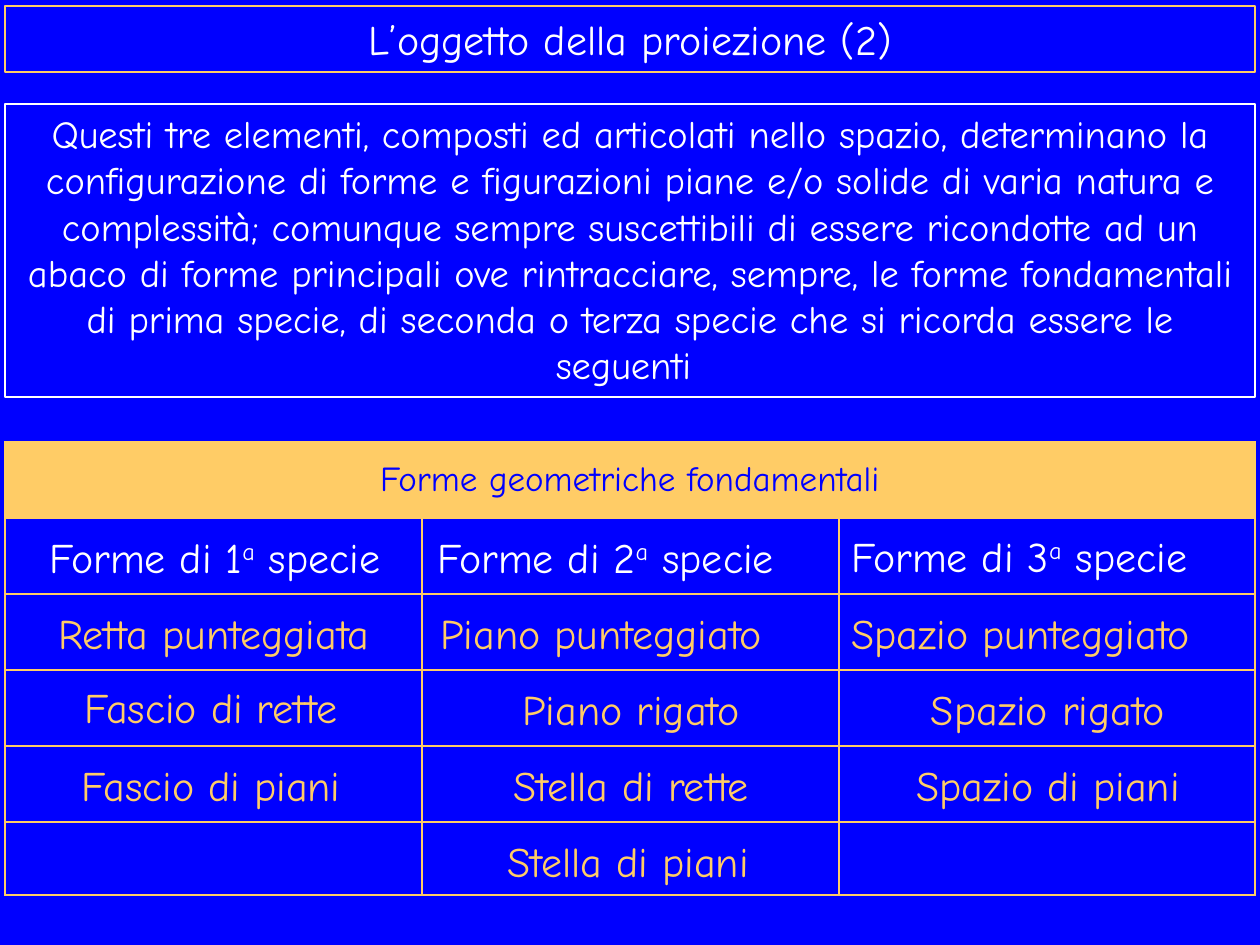
from dataclasses import dataclass

from lxml import etree
from pptx import Presentation
from pptx.dml.color import RGBColor
from pptx.enum.shapes import MSO_SHAPE
from pptx.enum.text import MSO_ANCHOR, MSO_AUTO_SIZE, PP_ALIGN
from pptx.oxml.ns import qn
from pptx.util import Emu, Pt

CENTER, LEFT = PP_ALIGN.CENTER, PP_ALIGN.LEFT
TOP, MIDDLE = MSO_ANCHOR.TOP, MSO_ANCHOR.MIDDLE
GROW, FIXED = MSO_AUTO_SIZE.SHAPE_TO_FIT_TEXT, MSO_AUTO_SIZE.NONE
RECTANGLE = MSO_SHAPE.RECTANGLE

PX_PER_INCH = 126
FONT = "Comic Neue"
BLUE, WHITE, GOLD = "0000FF", "FFFFFF", "FFCC66"

MARGIN, FULL_WIDTH = 5, 1250
TABLE_TOP, ROW_HEIGHT, LAST_ROW_HEIGHT, ROW_COUNT = 442, 76, 73, 6
COLUMN_WIDTHS = (417, 417, 416)
LABEL_LEFTS = (5, 425, 839)
LABEL_TOP, LABEL_WIDTH, LABEL_HEIGHT = 525, 412, 63

TITLE = "L’oggetto della proiezione (2)"
INTRO = (
    "Questi tre elementi, composti ed articolati nello spazio, determinano la "
    "configurazione di forme e figurazioni piane e/o solide di varia natura e "
    "complessità; comunque sempre suscettibili di essere ricondotte ad un abaco "
    "di forme principali ove rintracciare, sempre, le forme fondamentali di prima "
    "specie, di seconda o terza specie che si ricorda essere le seguenti "
)
TABLE_TITLE = "Forme geometriche fondamentali"


@dataclass(frozen=True)
class Span:
    text: str
    size: int
    color: str
    raised: bool = False


@dataclass(frozen=True)
class Label:
    column: int
    row: int
    spans: tuple[Span, ...]
    align: PP_ALIGN = CENTER
    shift_x: int = 0
    shift_y: int = 0


def heading(number: int) -> tuple[Span, ...]:
    return (
        Span(f"Forme di {number}", 24, WHITE),
        Span("a", 24, WHITE, raised=True),
        Span(" specie", 24, WHITE),
    )


def form(text: str) -> tuple[Span, ...]:
    return (Span(text, 24, GOLD),)


LABELS = (
    Label(0, 0, heading(1), shift_x=4),
    Label(1, 0, heading(2), LEFT),
    Label(2, 0, heading(3), LEFT, shift_y=-1),
    Label(0, 1, form("Retta punteggiata"), shift_x=3),
    Label(1, 1, form("Piano punteggiato"), LEFT, shift_x=3),
    Label(2, 1, form("Spazio punteggiato"), LEFT),
    Label(0, 2, form("Fascio di rette"), shift_y=-2),
    Label(1, 2, form("Piano rigato")),
    Label(2, 2, form("Spazio rigato"), shift_x=3),
    Label(0, 3, form("Fascio di piani")),
    Label(1, 3, form("Stella di rette")),
    Label(2, 3, form("Spazio di piani"), shift_x=3),
    Label(1, 4, form("Stella di piani"), shift_x=-3),
)


def px(length: int) -> Emu:
    return Emu(round(length * 914400 / PX_PER_INCH))


def rgb(color: str) -> RGBColor:
    return RGBColor.from_string(color)


def write(frame, spans: tuple[Span, ...], align: PP_ALIGN = CENTER) -> None:
    para = frame.paragraphs[0]
    para.alignment = align
    for span in spans:
        run = para.add_run()
        run.text = span.text
        run.font.name = FONT
        run.font.size = Pt(span.size)
        run.font.color.rgb = rgb(span.color)
        if span.raised:
            run.font._element.set("baseline", "30000")


def set_frame(frame, anchor: MSO_ANCHOR, auto_size: MSO_AUTO_SIZE) -> None:
    frame.word_wrap = True
    frame.vertical_anchor = anchor
    frame.auto_size = auto_size


def outline(shape, color: str, width: float) -> None:
    shape.line.color.rgb = rgb(color)
    shape.line.width = Pt(width)


def draw_title(page) -> None:
    title = page.shapes.title
    title.left, title.top = px(MARGIN), px(6)
    title.width, title.height = px(FULL_WIDTH), px(66)
    outline(title, GOLD, 0.75)
    set_frame(title.text_frame, MIDDLE, FIXED)
    write(title.text_frame, (Span(TITLE, 24, WHITE),))


def draw_intro(page) -> None:
    box = page.shapes.add_shape(
        RECTANGLE, px(MARGIN), px(104), px(FULL_WIDTH), px(293)
    )
    box.shadow.inherit = False
    box.fill.background()
    outline(box, WHITE, 0)
    set_frame(box.text_frame, TOP, GROW)
    write(box.text_frame, (Span(INTRO, 22, WHITE),))


def set_borders(cell, color: str, width: float) -> None:
    properties = cell._tc.get_or_add_tcPr()
    for position, side in enumerate(("a:lnL", "a:lnR", "a:lnT", "a:lnB")):
        border = etree.Element(qn(side), w=str(Pt(width)))
        fill = etree.SubElement(border, qn("a:solidFill"))
        etree.SubElement(fill, qn("a:srgbClr"), val=color)
        properties.insert(position, border)


def draw_table(page) -> None:
    height = ROW_HEIGHT * (ROW_COUNT - 1) + LAST_ROW_HEIGHT
    table = page.shapes.add_table(
        ROW_COUNT, len(COLUMN_WIDTHS),
        px(MARGIN), px(TABLE_TOP), px(FULL_WIDTH), px(height),
    ).table
    table.first_row = table.horz_banding = False
    for column, width in zip(table.columns, COLUMN_WIDTHS):
        column.width = px(width)
    for row in table.rows:
        row.height = px(ROW_HEIGHT)
    table.rows[ROW_COUNT - 1].height = px(LAST_ROW_HEIGHT)
    for cell in table.iter_cells():
        cell.fill.background()
        set_borders(cell, GOLD, 1)
    header = table.cell(0, 0)
    header.merge(table.cell(0, len(COLUMN_WIDTHS) - 1))
    header.fill.solid()
    header.fill.fore_color.rgb = rgb(GOLD)
    header.vertical_anchor = MIDDLE
    write(header.text_frame, (Span(TABLE_TITLE, 20, BLUE),))


def draw_label(page, label: Label) -> None:
    box = page.shapes.add_textbox(
        px(LABEL_LEFTS[label.column] + label.shift_x),
        px(LABEL_TOP + label.row * ROW_HEIGHT + label.shift_y),
        px(LABEL_WIDTH), px(LABEL_HEIGHT),
    )
    set_frame(box.text_frame, TOP, GROW)
    write(box.text_frame, label.spans, label.align)


def main() -> None:
    deck = Presentation()
    deck.slide_width, deck.slide_height = px(1260), px(945)
    page = deck.slides.add_slide(deck.slide_layouts[5])
    page.background.fill.solid()
    page.background.fill.fore_color.rgb = rgb(BLUE)
    draw_intro(page)
    draw_table(page)
    draw_title(page)
    for label in LABELS:
        draw_label(page, label)
    deck.save("out.pptx")


if __name__ == "__main__":
    main()
